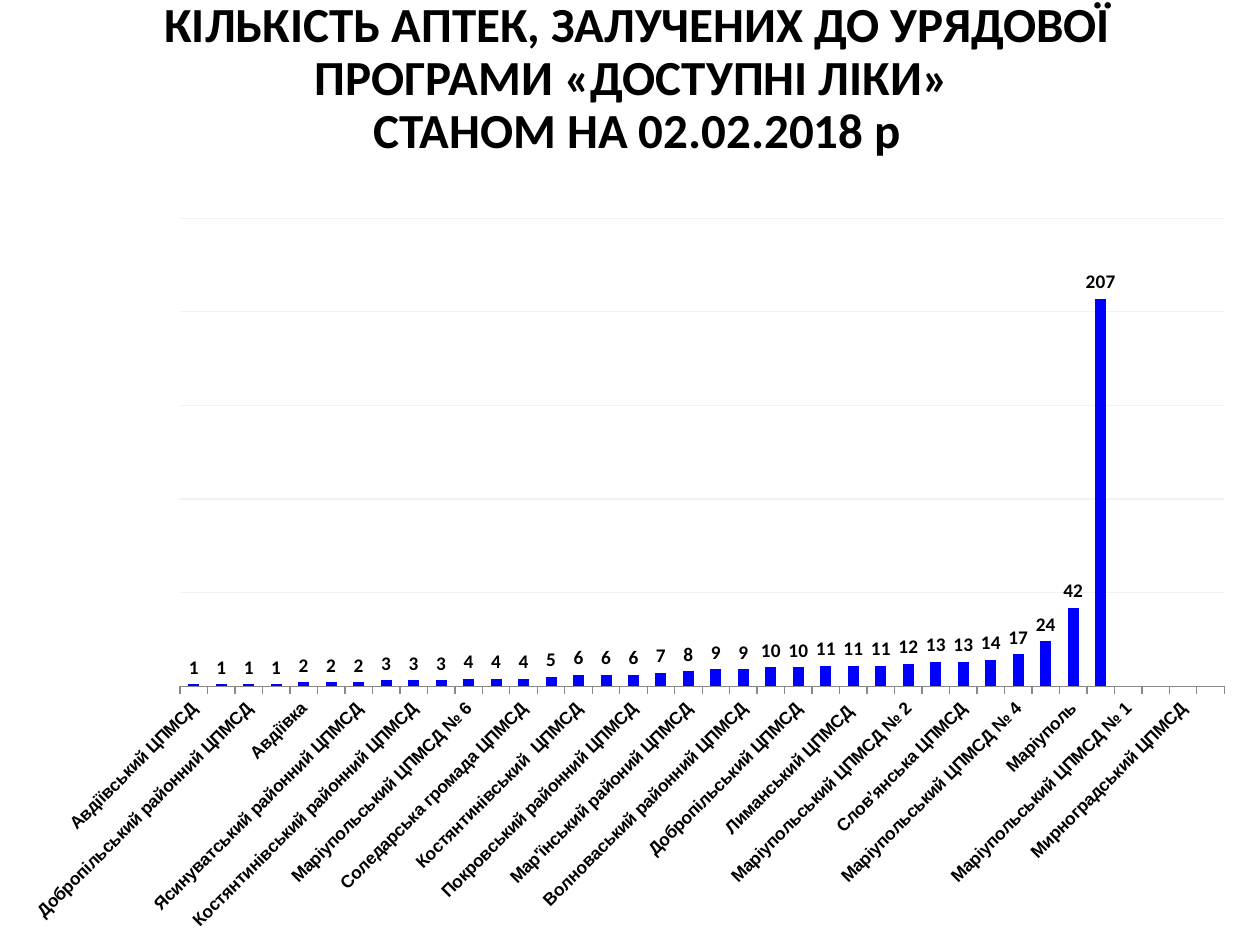
from lxml import etree
from pptx import Presentation
from pptx.chart.data import CategoryChartData
from pptx.dml.color import RGBColor
from pptx.enum import chart as kinds, shapes, text
from pptx.oxml import ns
from pptx.util import Pt

BLACK = RGBColor(0, 0, 0)
WHITE = RGBColor(255, 255, 255)
BLUE = RGBColor(0, 0, 255)
GRID = RGBColor(0xF2, 0xF2, 0xF2)
AXIS = RGBColor(0x89, 0x89, 0x89)

TITLE = ("КІЛЬКІСТЬ АПТЕК, ЗАЛУЧЕНИХ ДО УРЯДОВОЇ ПРОГРАМИ «ДОСТУПНІ ЛІКИ» \v"
         "СТАНОМ НА 02.02.2018 р")
PHARMACIES = [
    ("Авдіївський ЦПМСД", 1),
    ("Авдіївська лінійна поліклініка", 1),
    ("Добропільський районний ЦПМСД", 1),
    ("Олександрівський районний ЦПМСД", 1),
    ("Авдіївка", 2),
    ("Вугледарський ЦПМСД", 2),
    ("Ясинуватський районний ЦПМСД", 2),
    ("Дружківський ЦПМСД", 3),
    ("Костянтинівський районний ЦПМСД", 3),
    ("Мангушський районний ЦПМСД", 3),
    ("Маріупольський ЦПМСД № 6", 4),
    ("Новогродівський ЦПМСД", 4),
    ("Соледарська громада ЦПМСД", 4),
    ("Слов'янський районний ЦПМСД", 5),
    ("Костянтинівський  ЦПМСД", 6),
    ("Нікольський районний ЦПМСД", 6),
    ("Покровський районний ЦПМСД", 6),
    ("Селидівський ЦПМСД", 7),
    ("Мар'їнський районий ЦПМСД", 8),
    ("Маріупольський ЦПМСД № 3", 9),
    ("Волноваський районний ЦПМСД", 9),
    ("Бахмутський ЦПМСД", 10),
    ("Добропільський ЦПМСД", 10),
    ("Краматорський ЦПМСД № 2", 11),
    ("Лиманський ЦПМСД ", 11),
    ("Торецький ЦПМСД", 11),
    ("Маріупольський ЦПМСД № 2", 12),
    ("Краматорський ЦПМСД № 1", 13),
    ("Слов’янська ЦПМСД", 13),
    ("Бахмутський районний ЦПМСД", 14),
    ("Маріупольський ЦПМСД № 4", 17),
    ("Краматорськ", 24),
    ("Маріуполь", 42),
    ("Область", 207),
    ("Маріупольський ЦПМСД № 1", None),
    ("Маріупольський ЦПМСД № 5", None),
    ("Мирноградський ЦПМСД", None),
    ("Покровський ЦПМСД", None),
]
CHART_LEFT, CHART_TOP, CHART_WIDTH, CHART_HEIGHT = 5, 116.5, 709, 423.5
PLOT_LEFT, PLOT_TOP, PLOT_WIDTH, PLOT_HEIGHT = 102.9, 124.75, 596.8, 267.4


def set_font(font, name, size, bold):
    font.name, font.size, font.bold = name, Pt(size), bold
    font.color.rgb = BLACK


def add_title_band(page):
    band = page.shapes.add_shape(shapes.MSO_SHAPE.RECTANGLE,
                                 Pt(51), Pt(11.5), Pt(620), Pt(78.5))
    band.shadow.inherit = False
    band.line.fill.background()
    band.fill.solid()
    band.fill.fore_color.rgb = WHITE
    colour = band._element.spPr.find(ns.qn("a:solidFill"))[0]
    etree.SubElement(colour, ns.qn("a:alpha")).set("val", "81000")


def add_title(page):
    box = page.shapes.add_textbox(Pt(54), Pt(23), Pt(620), Pt(78.5))
    frame = box.text_frame
    frame.word_wrap = True
    frame.vertical_anchor = text.MSO_ANCHOR.MIDDLE
    frame.margin_bottom = Pt(37.5)
    para = frame.paragraphs[0]
    para.text = TITLE
    para.alignment = text.PP_ALIGN.CENTER
    para.line_spacing = 0.9
    set_font(para.font, "Calibri", 28, True)


def place_plot(chart):
    plot_area = chart._chartSpace.chart.plotArea
    for old in plot_area.findall(ns.qn("c:layout")):
        plot_area.remove(old)
    layout = etree.Element(ns.qn("c:layout"))
    manual = etree.SubElement(layout, ns.qn("c:manualLayout"))
    settings = {
        "layoutTarget": "inner", "xMode": "edge", "yMode": "edge",
        "x": (PLOT_LEFT - CHART_LEFT) / CHART_WIDTH,
        "y": (PLOT_TOP - CHART_TOP) / CHART_HEIGHT,
        "w": PLOT_WIDTH / CHART_WIDTH,
        "h": PLOT_HEIGHT / CHART_HEIGHT,
    }
    for tag, value in settings.items():
        etree.SubElement(manual, ns.qn("c:" + tag)).set("val", str(value))
    plot_area.insert(0, layout)


def add_pharmacy_chart(page):
    data = CategoryChartData()
    names, counts = zip(*PHARMACIES)
    data.categories = names
    data.add_series("Series 1", counts)
    chart = page.shapes.add_chart(
        kinds.XL_CHART_TYPE.COLUMN_CLUSTERED, Pt(CHART_LEFT), Pt(CHART_TOP),
        Pt(CHART_WIDTH), Pt(CHART_HEIGHT), data).chart
    chart.has_legend = False
    chart.has_title = False
    set_font(chart.font, "Calibri", 10, False)
    place_plot(chart)

    plot = chart.plots[0]
    plot.gap_width = 150
    plot.vary_by_categories = False
    bars = plot.series[0].format.fill
    bars.solid()
    bars.fore_color.rgb = BLUE
    plot.has_data_labels = True
    labels = plot.data_labels
    labels.show_value = True
    labels.position = kinds.XL_LABEL_POSITION.OUTSIDE_END
    set_font(labels.font, "Calibri", 11, True)

    centres = chart.category_axis
    centres.major_tick_mark = kinds.XL_TICK_MARK.OUTSIDE
    centres.format.line.color.rgb = AXIS
    centres.format.line.width = Pt(0.75)
    set_font(centres.tick_labels.font, "Arial", 10, True)
    centres._element.find(ns.qn("c:txPr")).find(ns.qn("a:bodyPr")).set("rot", "-2700000")

    scale = chart.value_axis
    scale.minimum_scale, scale.maximum_scale, scale.major_unit = 0, 250, 50
    scale.visible = False
    scale.has_major_gridlines = True
    scale.major_gridlines.format.line.color.rgb = GRID
    scale.major_gridlines.format.line.width = Pt(0.75)


def main():
    deck = Presentation()
    deck.slide_width, deck.slide_height = Pt(720), Pt(540)
    page = deck.slides.add_slide(deck.slide_layouts[6])
    add_title_band(page)
    add_title(page)
    add_pharmacy_chart(page)
    deck.save("out.pptx")


if __name__ == "__main__":
    main()
